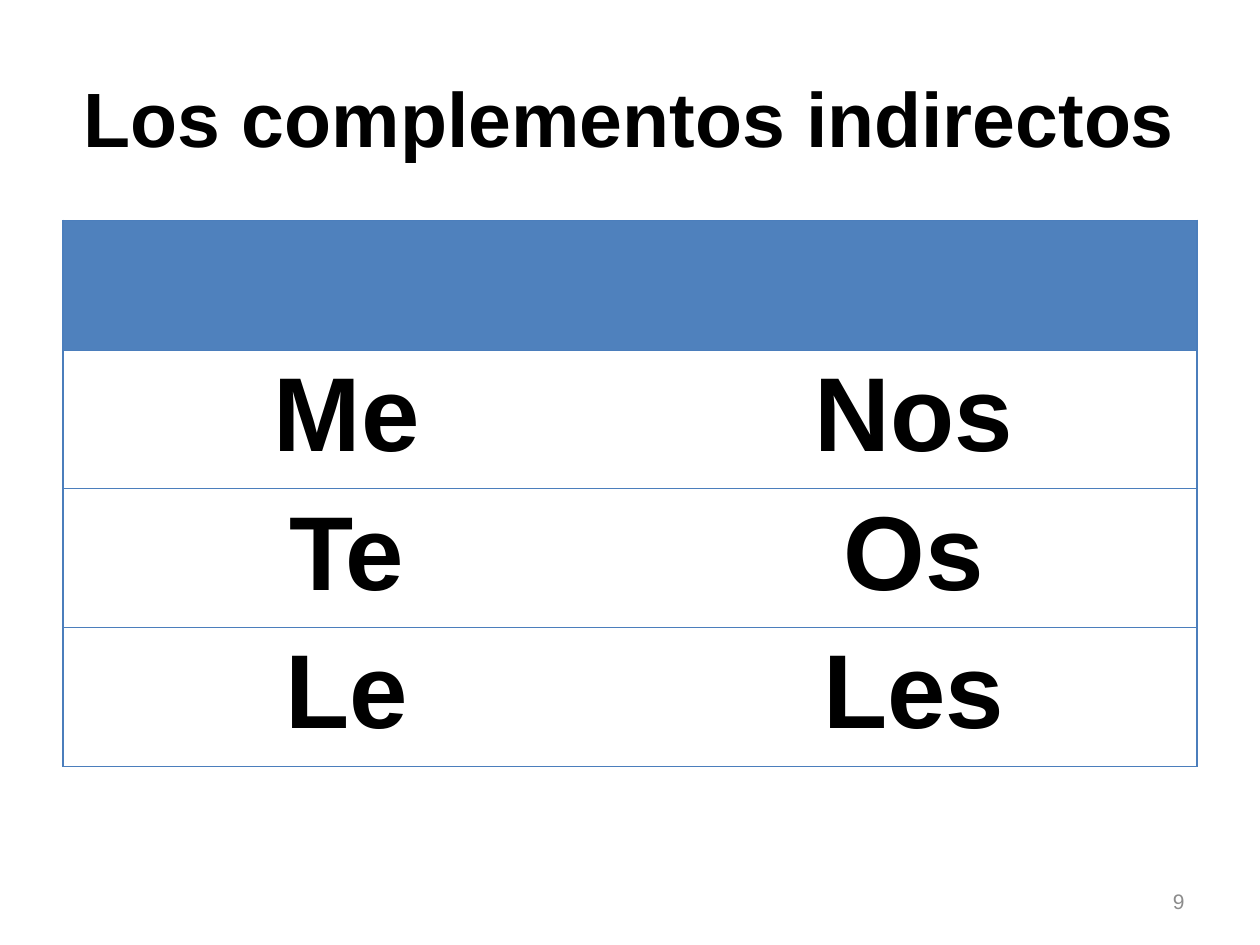
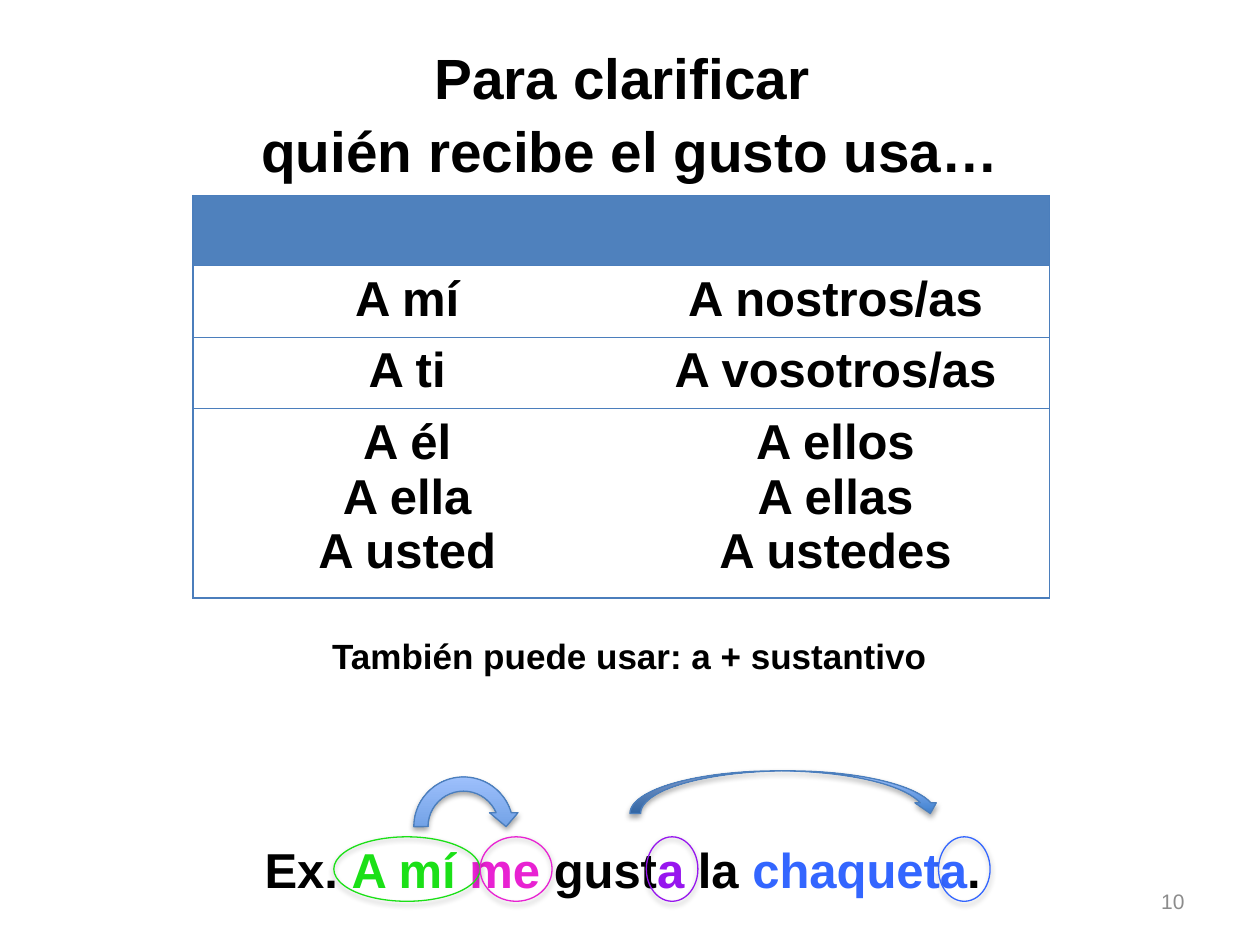
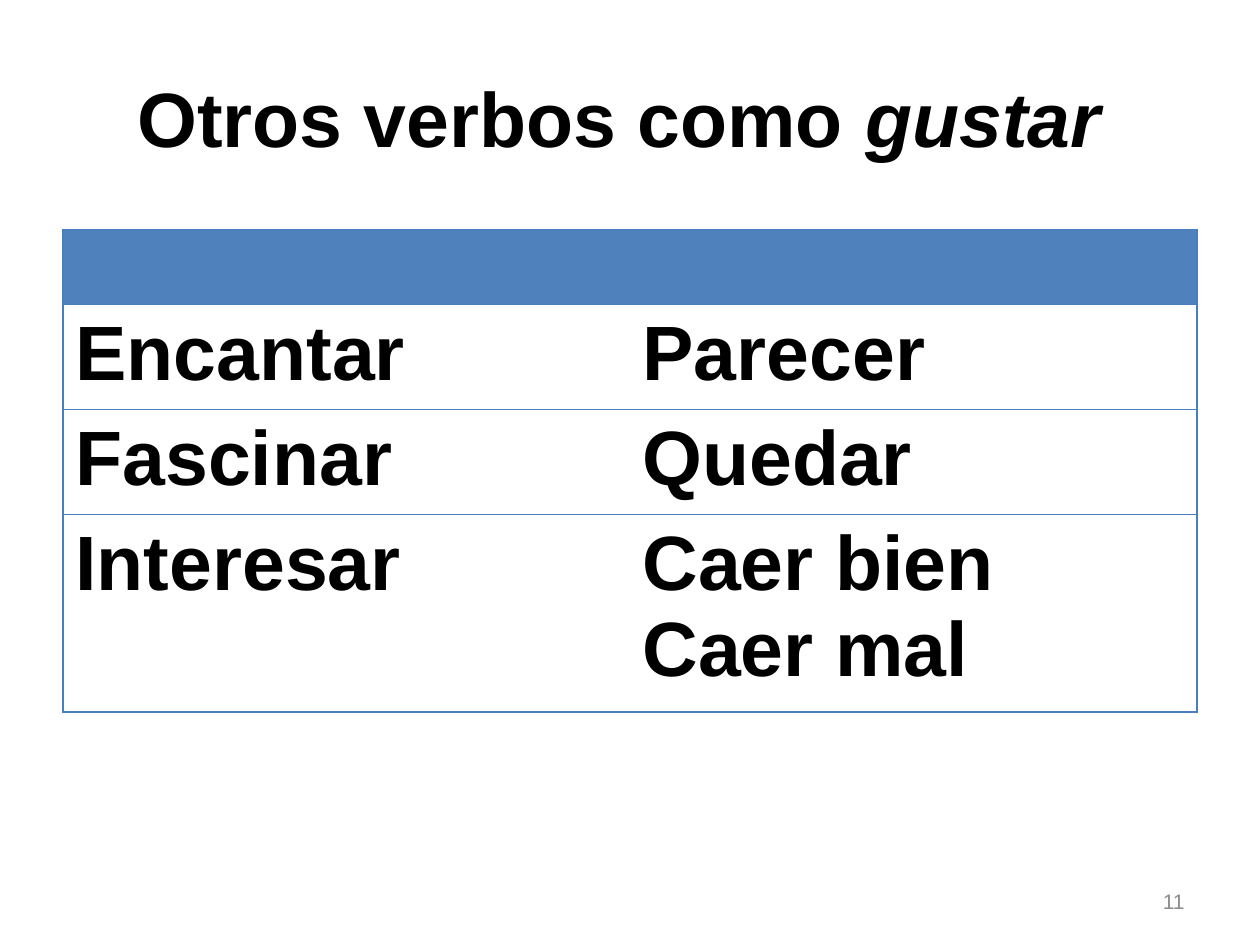
from lxml.etree import SubElement
from pptx import Presentation
from pptx.dml.color import RGBColor
from pptx.enum.shapes import MSO_SHAPE
from pptx.enum.text import MSO_ANCHOR, PP_ALIGN
from pptx.oxml.ns import qn
from pptx.util import Cm, Pt

BLACK = RGBColor(0x00, 0x00, 0x00)
WHITE = RGBColor(0xFF, 0xFF, 0xFF)
GREY = RGBColor(0x8C, 0x8C, 0x8C)
HEADER_BLUE = RGBColor(0x4F, 0x81, 0xBD)
LINE_BLUE = RGBColor(0x4B, 0x7E, 0xBC)
DEEP_BLUE = RGBColor(0x3F, 0x80, 0xCE)
PALE_BLUE = RGBColor(0xA4, 0xC4, 0xFF)
GREEN = RGBColor(0x1B, 0xE0, 0x17)
PINK = RGBColor(0xE8, 0x22, 0xD2)
PURPLE = RGBColor(0x97, 0x16, 0xEE)
BLUE = RGBColor(0x33, 0x66, 0xFF)

FONT = "Arial"
THIN = Pt(0.75)
FIRST_PAGE = 9

# Title paragraphs hold (text, italic) runs; lengths are in cm, text sizes in points.
LESSONS = [
    {
        "title": [[("Los complementos indirectos", False)]],
        "title_size": 44, "title_top": 0.76,
        "table_at": (1.27, 4.44, 22.86), "row_heights": [2.62] * 4,
        "size": 60, "align": PP_ALIGN.CENTER,
        "rows": [("Me", "Nos"), ("Te", "Os"), ("Le", "Les")],
    },
    {
        "title": [[("Para clarificar ", False)],
                  [("quién recibe el gusto usa…", False)]],
        "title_size": 32.4, "title_top": 0.69,
        "table_at": (3.89, 3.94, 17.27), "row_heights": [1.42, 1.42, 1.42, 3.56],
        "size": 28, "align": PP_ALIGN.CENTER,
        "rows": [("A mí", "A nostros/as"), ("A ti", "A vosotros/as"),
                 ("A él\nA ella\nA usted", "A ellos\nA ellas\nA ustedes")],
    },
    {
        "title": [[("Otros verbos como ", False), ("gustar ", True)]],
        "title_size": 44, "title_top": 0.76,
        "table_at": (1.27, 4.63, 22.86), "row_heights": [1.51, 1.98, 1.98, 3.73],
        "size": 44, "align": PP_ALIGN.LEFT,
        "rows": [("Encantar", "Parecer"), ("Fascinar", "Quedar"),
                 ("Interesar", "Caer bien\nCaer mal")],
    },
]

HINT = "También puede usar: a + sustantivo"
EXAMPLE = [("Ex. ", BLACK), ("A mí ", GREEN), ("me ", PINK), ("gust", BLACK),
           ("a", PURPLE), (" la ", BLACK), ("chaqueta", BLUE), (". ", BLACK)]
ARROWS = [(MSO_SHAPE.CIRCULAR_ARROW, 8.2, 15.52, 2.29, 2.29),
          (MSO_SHAPE.CURVED_DOWN_ARROW, 12.7, 15.54, 6.27, 0.86)]
RINGS = [(6.73, 2.95, GREEN), (9.68, 1.45, PINK),
         (18.92, 1.04, BLUE), (13.03, 1.04, PURPLE)]  # left, width, colour
RING_TOP, RING_HEIGHT = 16.87, 1.3


def add_run(paragraph, text, size, color=BLACK, bold=True, italic=False):
    run = paragraph.add_run()
    run.text = text
    font = run.font
    font.name, font.size, font.bold, font.italic = FONT, Pt(size), bold, italic
    font.color.rgb = color


def next_paragraph(frame, index, align):
    paragraph = frame.add_paragraph() if index else frame.paragraphs[0]
    paragraph.alignment = align
    return paragraph


def add_text_frame(slide, left, top, width, height, anchor=MSO_ANCHOR.MIDDLE):
    frame = slide.shapes.add_textbox(Cm(left), Cm(top), Cm(width), Cm(height)).text_frame
    frame.word_wrap = True
    frame.vertical_anchor = anchor
    return frame


def add_title(slide, lesson):
    frame = add_text_frame(slide, 1.27, lesson["title_top"], 22.86, 3.18)
    for index, runs in enumerate(lesson["title"]):
        paragraph = next_paragraph(frame, index, PP_ALIGN.CENTER)
        if index:
            paragraph.space_before = Pt(2.6)
        for text, italic in runs:
            add_run(paragraph, text, lesson["title_size"], italic=italic)


def add_page_number(slide, number):
    frame = add_text_frame(slide, 18.21, 17.65, 5.92, 1.02)
    add_run(next_paragraph(frame, 0, PP_ALIGN.RIGHT), str(number), 12, GREY, bold=False)


def set_borders(cell, hidden_side):
    """Rule every side of the cell except the one facing the other column."""
    properties = cell._tc.get_or_add_tcPr()
    for side in ("lnL", "lnR", "lnT", "lnB"):
        line = SubElement(properties, qn(f"a:{side}"), w=str(THIN))
        if side == hidden_side:
            SubElement(line, qn("a:noFill"))
        else:
            fill = SubElement(line, qn("a:solidFill"))
            SubElement(fill, qn("a:srgbClr"), val=str(LINE_BLUE))


def add_pronoun_table(slide, lesson):
    left, top, width = lesson["table_at"]
    heights = lesson["row_heights"]
    table = slide.shapes.add_table(len(heights), 2, Cm(left), Cm(top),
                                   Cm(width), Cm(sum(heights))).table
    table.first_row = table.horz_banding = False
    for r, (height, texts) in enumerate(zip(heights, [("", "")] + lesson["rows"])):
        table.rows[r].height = Cm(height)
        for c, text in enumerate(texts):
            cell = table.cell(r, c)
            set_borders(cell, "lnL" if c else "lnR")
            cell.fill.solid()
            cell.fill.fore_color.rgb = WHITE if r else HEADER_BLUE
            if text:
                for index, line in enumerate(text.split("\n")):
                    paragraph = next_paragraph(cell.text_frame, index, lesson["align"])
                    add_run(paragraph, line, lesson["size"])


def add_outlined(slide, kind, left, top, width, height, color):
    """Add a thinly outlined shape with a soft shadow below it."""
    shape = slide.shapes.add_shape(kind, Cm(left), Cm(top), Cm(width), Cm(height))
    shape.fill.background()
    shape.line.color.rgb = color
    shape.line.width = THIN
    return shape


def add_shadow(shape):
    shape.shadow.inherit = False
    effects = shape._element.spPr.find(qn("a:effectLst"))
    shadow = SubElement(effects, qn("a:outerShdw"), blurRad=str(Pt(3.1)),
                        dist=str(Pt(1.8)), dir="5400000", rotWithShape="0")
    color = SubElement(shadow, qn("a:srgbClr"), val=str(BLACK))
    SubElement(color, qn("a:alpha"), val="35000")


def add_example(slide):
    frame = add_text_frame(slide, 2.95, 12.67, 19.48, 5.56, MSO_ANCHOR.TOP)
    hint = next_paragraph(frame, 0, PP_ALIGN.CENTER)
    hint.space_after = Pt(93)
    add_run(hint, HINT, 20)
    sentence = next_paragraph(frame, 1, PP_ALIGN.CENTER)
    for text, color in EXAMPLE:
        add_run(sentence, text, 28, color)

    for kind, *place in ARROWS:
        arrow = add_outlined(slide, kind, *place, LINE_BLUE)
        arrow.fill.gradient()
        arrow.fill.gradient_angle = 90
        for stop, color in zip(arrow.fill.gradient_stops, (DEEP_BLUE, PALE_BLUE)):
            stop.color.rgb = color
        add_shadow(arrow)
    for left, width, color in RINGS:
        add_shadow(add_outlined(slide, MSO_SHAPE.OVAL, left, RING_TOP,
                                width, RING_HEIGHT, color))


def main():
    deck = Presentation()
    deck.slide_width, deck.slide_height = Cm(25.4), Cm(19.05)
    slides = []
    for number, lesson in enumerate(LESSONS, FIRST_PAGE):
        slide = deck.slides.add_slide(deck.slide_layouts[6])
        add_title(slide, lesson)
        add_pronoun_table(slide, lesson)
        add_page_number(slide, number)
        slides.append(slide)
    add_example(slides[1])
    deck.save("out.pptx")


if __name__ == "__main__":
    main()
